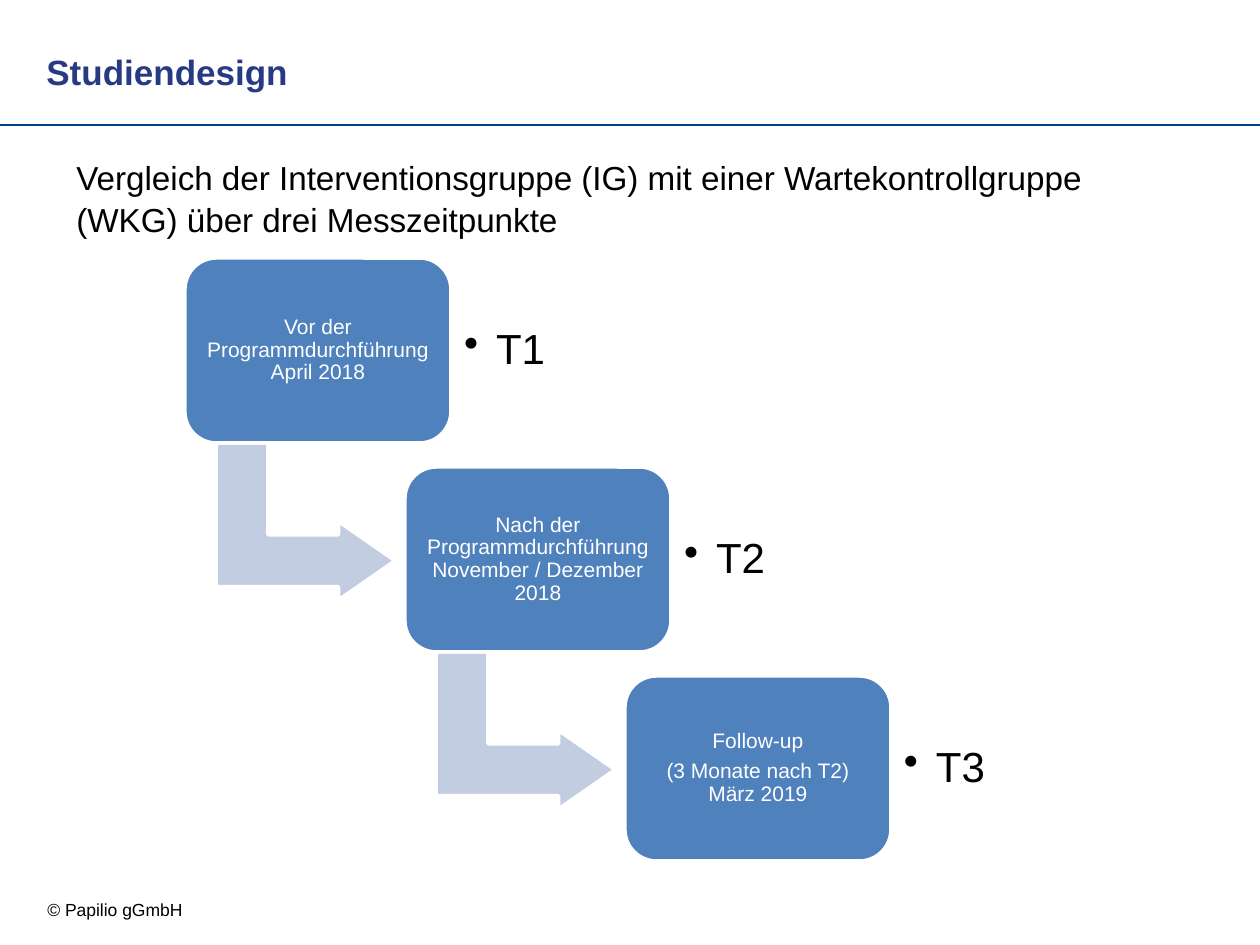
"""Build the study design slide: three measurement points in a descending staircase."""
from dataclasses import dataclass
from typing import NamedTuple

from lxml.etree import SubElement
from pptx import Presentation
from pptx.dml.color import RGBColor
from pptx.enum.shapes import MSO_CONNECTOR as Connector, MSO_SHAPE as Preset
from pptx.enum.text import MSO_ANCHOR as Anchor, PP_ALIGN as Align
from pptx.oxml.ns import qn
from pptx.shapes.autoshape import Shape
from pptx.slide import Slide
from pptx.util import Emu, Pt

EMU_PER_PX = 914400 / 126


@dataclass(frozen=True)
class Theme:
    font: str = "Arial"
    ink: str = "000000"
    white: str = "FFFFFF"
    title: str = "283A84"
    rule: str = "024089"
    card: str = "4F81BD"
    arrow: str = "C2CDE1"
    title_size: int = 20
    intro_size: int = 19
    card_size: int = 12
    label_size: int = 24
    footer_size: int = 10
    outline: float = 2
    rule_width: float = 1.5


class Box(NamedTuple):
    left: int
    top: int
    width: int
    height: int

    def shifted(self, dx: int, dy: int) -> "Box":
        return Box(self.left + dx, self.top + dy, self.width, self.height)


class Phase(NamedTuple):
    label: str
    lines: tuple[str, ...]


THEME = Theme()
CARD = Box(185, 258, 266, 185)
LABEL = Box(451, 276, 193, 150)
ARROW = Box(227, 432, 157, 179)
STEP_X, STEP_Y = 220, 209
CARD_INSET, LABEL_INSET, LABEL_INDENT = 7, 13, 32
PHASES = (
    Phase("T1", ("Vor der Programmdurchführung April 2018",)),
    Phase("T2", ("Nach der Programmdurchführung November / Dezember 2018",)),
    Phase("T3", ("Follow-up", "(3 Monate nach T2) März 2019")),
)


def px(length: int) -> Emu:
    """Convert a length in px to EMU."""
    return Emu(round(length * EMU_PER_PX))


def write(shape: Shape, lines: tuple[str, ...], size: int, color: str, *,
          bold: bool = False, align: Align = Align.LEFT, anchor: Anchor = Anchor.TOP,
          spacing: float = 1.0, after: float = 0, inset: int | None = None,
          bullet: bool = False) -> None:
    """Fill a shape with one paragraph per line."""
    frame = shape.text_frame
    frame.word_wrap = True
    frame.vertical_anchor = anchor
    if inset is not None:
        frame.margin_left = frame.margin_right = px(inset)
        frame.margin_top = frame.margin_bottom = px(inset)
    frame.text = "\n".join(lines)
    for paragraph in frame.paragraphs:
        paragraph.alignment = align
        paragraph.line_spacing = spacing
        paragraph.space_after = Pt(after)
        if bullet:
            properties = paragraph._p.get_or_add_pPr()
            properties.set("marL", str(px(LABEL_INDENT)))
            properties.set("indent", str(-px(LABEL_INDENT)))
            SubElement(properties, qn("a:buChar"), char="•")
        font = paragraph.font
        font.name = THEME.font
        font.size = Pt(size)
        font.bold = bold
        font.color.rgb = RGBColor.from_string(color)


def add_text(slide: Slide, box: Box) -> Shape:
    """Add an empty text box."""
    return slide.shapes.add_textbox(*map(px, box))


def add_block(slide: Slide, preset: Preset, box: Box, fill: str,
              adjustments: tuple[float, ...]) -> Shape:
    """Add a filled preset shape with a white outline."""
    block = slide.shapes.add_shape(preset, *map(px, box))
    block.shadow.inherit = False
    block.fill.solid()
    block.fill.fore_color.rgb = RGBColor.from_string(fill)
    block.line.color.rgb = RGBColor.from_string(THEME.white)
    block.line.width = Pt(THEME.outline)
    for index, value in enumerate(adjustments):
        block.adjustments[index] = value
    return block


def add_phase(slide: Slide, phase: Phase, index: int) -> None:
    """Draw one step of the staircase, with an arrow to the next one."""
    offset = index * STEP_X, index * STEP_Y
    if index < len(PHASES) - 1:
        arrow = add_block(slide, Preset.BENT_UP_ARROW, ARROW.shifted(*offset),
                          THEME.arrow, (0.33, 0.25, 0.36))
        arrow.rotation = 90
    card = add_block(slide, Preset.ROUNDED_RECTANGLE, CARD.shifted(*offset),
                     THEME.card, (0.17,))
    write(card, phase.lines, THEME.card_size, THEME.white, align=Align.CENTER,
          anchor=Anchor.MIDDLE, spacing=0.9, after=4.2, inset=CARD_INSET)
    write(add_text(slide, LABEL.shifted(*offset)), (phase.label,), THEME.label_size,
          THEME.ink, anchor=Anchor.MIDDLE, spacing=0.9, after=3.6,
          inset=LABEL_INSET, bullet=True)


def add_rule(slide: Slide, top: int, width: int) -> None:
    """Draw the line under the title."""
    rule = slide.shapes.add_connector(Connector.STRAIGHT, 0, px(top), px(width), px(top))
    rule.line.color.rgb = RGBColor.from_string(THEME.rule)
    rule.line.width = Pt(THEME.rule_width)
    SubElement(rule._element.spPr, qn("a:effectLst"))


def main() -> None:
    """Assemble and save the slide."""
    deck = Presentation()
    deck.slide_width, deck.slide_height = px(1260), px(945)
    slide = deck.slides.add_slide(deck.slide_layouts[6])

    add_rule(slide, 125, 1260)
    write(add_text(slide, Box(34, 44, 338, 54)), ("Studiendesign",),
          THEME.title_size, THEME.title, bold=True, anchor=Anchor.MIDDLE)
    write(add_text(slide, Box(64, 149, 1091, 93)),
          ("Vergleich der Interventionsgruppe (IG) mit einer Wartekontrollgruppe "
           "(WKG) über drei Messzeitpunkte",),
          THEME.intro_size, THEME.ink, spacing=1.05)
    for index, phase in enumerate(PHASES):
        add_phase(slide, phase, index)
    write(add_text(slide, Box(35, 892, 273, 34)), ("© Papilio gGmbH",),
          THEME.footer_size, THEME.ink, anchor=Anchor.MIDDLE)

    deck.save("out.pptx")


if __name__ == "__main__":
    main()
